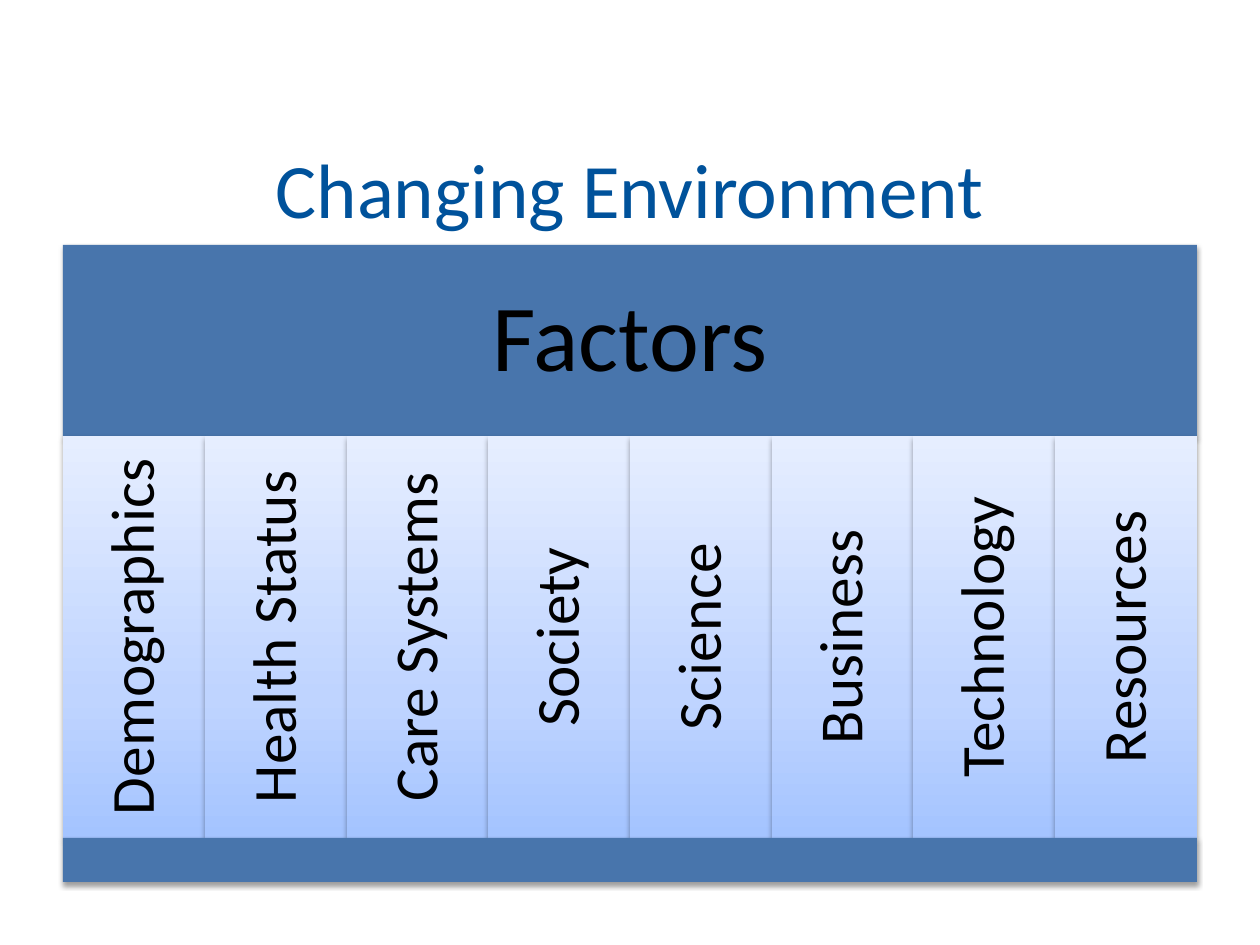
"""Build the Changing Environment slide: a factors banner over eight columns and a base bar."""
import pptx
import pptx.dml.color
import pptx.enum.shapes
import pptx.enum.text
import pptx.oxml
import pptx.oxml.ns
import pptx.util

PX = 914400 / 126
THEME = {
    "font": "Calibri",
    "title": "00529B",
    "text": "000000",
    "bar": "4875AC",
    "column": [(0, "A4C4FF"), (35, "BFD4FF"), (100, "E6EEFF")],
    "title_size": 44,
    "banner_size": 54,
    "column_size": 35,
}
NAMESPACE = pptx.oxml.ns.nsdecls("a")
SHADOW = (
    f'<a:outerShdw {NAMESPACE} blurRad="40000" dist="20000" dir="5400000" rotWithShape="0">'
    '<a:srgbClr val="000000"><a:alpha val="38000"/></a:srgbClr></a:outerShdw>'
)


def add_panel(slide, left, top, width, height, color=THEME["bar"]):
    lengths = [round(length * PX) for length in (left, top, width, height)]
    panel = slide.shapes.add_shape(pptx.enum.shapes.MSO_SHAPE.RECTANGLE, *lengths)
    panel.line.fill.background()
    properties = panel._element.spPr
    if isinstance(color, str):
        panel.fill.solid()
        panel.fill.fore_color.rgb = pptx.dml.color.RGBColor.from_string(color)
    else:
        panel.fill.gradient()
        panel.fill.gradient_angle = 90
        stops = properties.find(".//" + pptx.oxml.ns.qn("a:gsLst"))
        stops[:] = [
            pptx.oxml.parse_xml(
                f'<a:gs {NAMESPACE} pos="{position * 1000}"><a:srgbClr val="{shade}"/></a:gs>'
            )
            for position, shade in color
        ]
    panel.shadow.inherit = False
    effects = properties.find(pptx.oxml.ns.qn("a:effectLst"))
    effects.append(pptx.oxml.parse_xml(SHADOW))
    return panel


def write(box, text, size, color, inset, spacing):
    frame = box.text_frame
    frame.word_wrap = True
    frame.vertical_anchor = pptx.enum.text.MSO_ANCHOR.MIDDLE
    frame.margin_left = frame.margin_right = round(inset * PX)
    frame.margin_top = frame.margin_bottom = round(inset * PX)
    para = frame.paragraphs[0]
    para.alignment = pptx.enum.text.PP_ALIGN.CENTER
    para.line_spacing = spacing
    span = para.add_run()
    span.text = text
    span.font.name = THEME["font"]
    span.font.size = pptx.util.Pt(size)
    span.font.color.rgb = pptx.dml.color.RGBColor.from_string(color)


deck = pptx.Presentation()
deck.slide_width = round(1260 * PX)
deck.slide_height = round(945 * PX)
page = deck.slides.add_slide(deck.slide_layouts[6])

LEFT, WIDTH = 63, 1134
title = page.shapes.add_textbox(*[round(length * PX) for length in (LEFT, 146, WIDTH, 84)])
write(title, "Changing Environment", THEME["title_size"], THEME["title"], 6, 1.0)

banner = add_panel(page, LEFT, 245, WIDTH, 191)
write(banner, "Factors", THEME["banner_size"], THEME["text"], 29, 0.9)

factors = [
    "Demographics", "Health Status", "Care Systems", "Society",
    "Science", "Business", "Technology", "Resources",
]
edges = [LEFT + round(WIDTH * index / len(factors)) for index in range(len(factors) + 1)]
for factor, start, end in zip(factors, edges, edges[1:]):
    column = add_panel(page, start, 436, end - start, 402, THEME["column"])
    write(column, factor, THEME["column_size"], THEME["text"], 19, 0.9)
    column.text_frame._txBody.bodyPr.set("vert", "vert270")

add_panel(page, LEFT, 838, WIDTH, 44)

deck.save("out.pptx")
